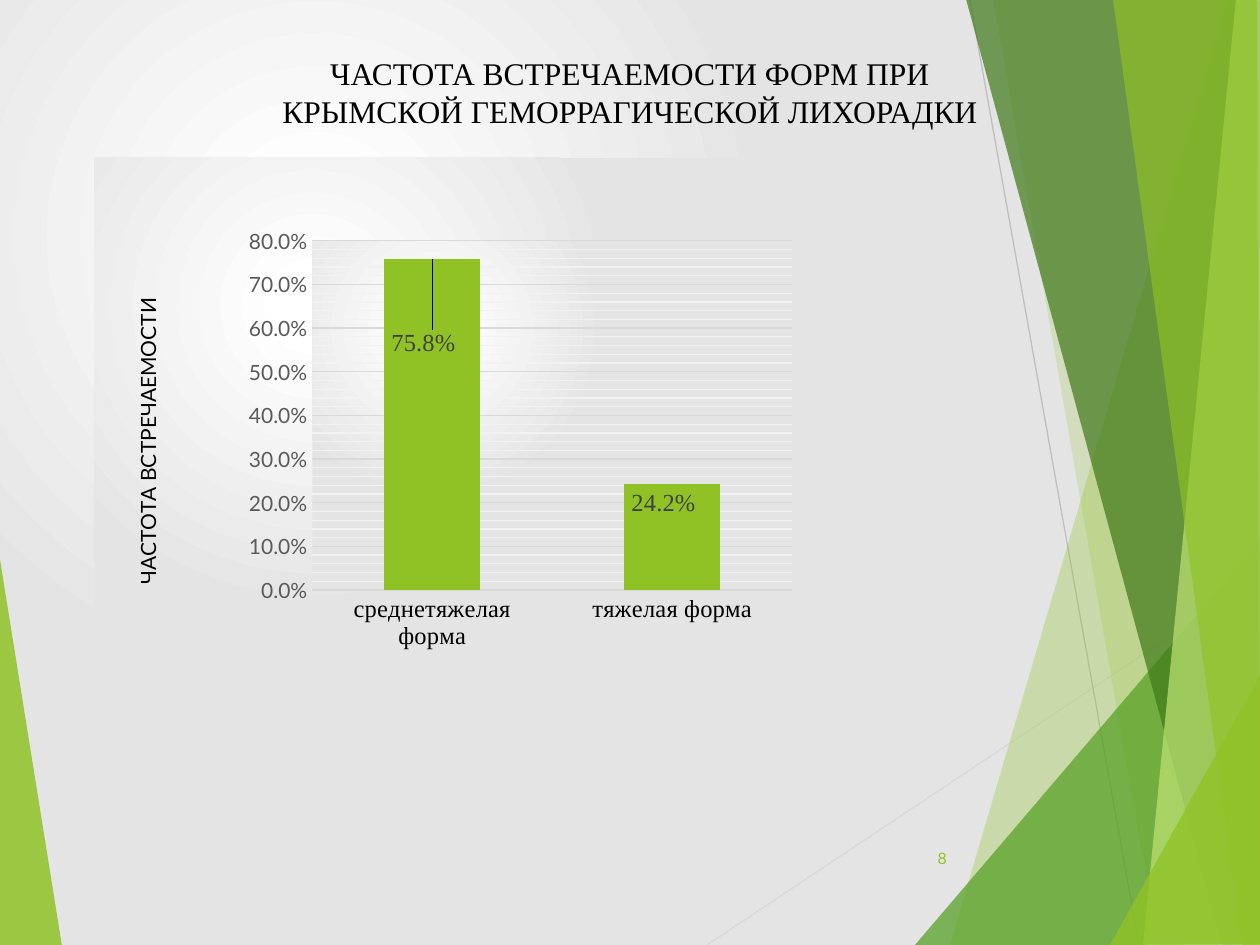
from lxml import etree
from pptx import Presentation
from pptx.chart.data import CategoryChartData
from pptx.dml.color import RGBColor
from pptx.enum.chart import XL_CHART_TYPE, XL_LABEL_POSITION, XL_TICK_MARK
from pptx.enum.shapes import MSO_CONNECTOR
from pptx.enum.text import MSO_ANCHOR, PP_ALIGN
from pptx.oxml import parse_xml
from pptx.oxml.ns import nsdecls, qn
from pptx.util import Pt

COLUMN = XL_CHART_TYPE.COLUMN_CLUSTERED
IN_END = XL_LABEL_POSITION.INSIDE_END
NO_TICK = XL_TICK_MARK.NONE
STRAIGHT = MSO_CONNECTOR.STRAIGHT
TOP, MIDDLE = MSO_ANCHOR.TOP, MSO_ANCHOR.MIDDLE
CENTER, RIGHT = PP_ALIGN.CENTER, PP_ALIGN.RIGHT

BLACK = RGBColor(0x00, 0x00, 0x00)
DARK = RGBColor(0x40, 0x40, 0x40)
GREY = RGBColor(0x59, 0x59, 0x59)
SILVER = RGBColor(0xBF, 0xBF, 0xBF)
PALE = RGBColor(0xD9, 0xD9, 0xD9)
FAINT = RGBColor(0xF2, 0xF2, 0xF2)
LIME = RGBColor(0x90, 0xC2, 0x26)
GREEN = RGBColor(0x54, 0xA0, 0x21)
FOREST = RGBColor(0x3F, 0x78, 0x19)
LIGHT = RGBColor(0xC0, 0xE4, 0x74)
SERIF, SANS = "Times New Roman", "Lato"
PX = 914400 / 126

GRAD = (
    f'<a:gradFill {nsdecls("a")} rotWithShape="1"><a:gsLst>'
    '<a:gs pos="5000"><a:srgbClr val="FFFFFF"/></a:gs>'
    '<a:gs pos="59000"><a:srgbClr val="E4E4E4"/></a:gs></a:gsLst>'
    '<a:path path="circle"><a:fillToRect l="50000" t="50000" r="100000" b="100000"/>'
    '</a:path></a:gradFill>'
)

prs = Presentation()
prs.slide_width, prs.slide_height = round(1260 * PX), round(945 * PX)
slide = prs.slides.add_slide(prs.slide_layouts[6])
shapes = slide.shapes

slide.background.fill.solid()
back = slide.element.find(".//" + qn("p:bgPr"))
back.replace(back[0], parse_xml(GRAD))


def add_text(text, box, font=SANS, size=12, color=BLACK, align=CENTER, anchor=TOP):
    frame = shapes.add_textbox(*[round(v * PX) for v in box]).text_frame
    frame.word_wrap = True
    frame.vertical_anchor = anchor
    para = frame.paragraphs[0]
    para.text = text
    para.alignment = align
    for run in para.runs:
        run.font.name, run.font.size = font, Pt(size)
        run.font.color.rgb = color


def set_layout(node, spot, **sides):
    layout = etree.Element(qn("c:layout"))
    manual = etree.SubElement(layout, qn("c:manualLayout"))
    for name, value in sides.items():
        etree.SubElement(manual, qn("c:" + name)).set("val", str(value))
    for old in node.findall(qn("c:layout")):
        node.remove(old)
    node.insert(spot, layout)


LINES = [(707, 945, 1261, 576, PALE), (970, 0, 1139, 945, SILVER)]
FACETS = [
    (LIME, 85, [(-1, 553), (62, 946), (-1, 945)]),
    (LIME, 30, [(1228, 0), (950, 945), (1262, 946), (1261, 1)]),
    (LIME, 20, [(993, -1), (1158, 945), (1261, 945), (1261, -1)]),
    (GREEN, 72, [(915, 945), (1260, 541), (1261, 945)]),
    (FOREST, 70, [(966, -1), (1222, 945), (1261, 944), (1261, -1)]),
    (LIGHT, 70, [(1236, -1), (1143, 945), (1261, 945), (1260, -1)]),
    (LIME, 65, [(1113, -1), (1242, 945), (1260, 945), (1257, -1)]),
    (LIME, 80, [(1110, 945), (1261, 674), (1261, 944)]),
]

for *ends, color in LINES:
    line = shapes.add_connector(STRAIGHT, *[round(v * PX) for v in ends])
    line.line.color.rgb, line.line.width = color, Pt(0.75)
    etree.SubElement(line.element.spPr, qn("a:effectLst"))

for color, alpha, points in FACETS:
    pen = shapes.build_freeform(*points[0], scale=PX)
    pen.add_line_segments(points[1:], close=True)
    facet = pen.convert_to_shape()
    facet.shadow.inherit = False
    facet.line.fill.background()
    facet.fill.solid()
    facet.fill.fore_color.rgb = color
    tint = facet.element.spPr.find(".//" + qn("a:srgbClr"))
    etree.SubElement(tint, qn("a:alpha")).set("val", str(alpha * 1000))

add_text("ЧАСТОТА ВСТРЕЧАЕМОСТИ ФОРМ ПРИ\nКРЫМСКОЙ ГЕМОРРАГИЧЕСКОЙ ЛИХОРАДКИ",
         (63, 48, 1134, 126), font=SERIF, size=18)

data = CategoryChartData(number_format="0.0%")
data.categories = ["среднетяжелая форма", "тяжелая форма"]
data.add_series("Series 1", [0.758, 0.242])
frame = shapes.add_chart(COLUMN, *[round(v * PX) for v in (94, 158, 873, 592)], data)
chart = frame.chart
chart.has_legend = chart.has_title = False
chart.font.name, chart.font.size = SANS, Pt(10)
chart.font.color.rgb = BLACK

cat, val = chart.category_axis, chart.value_axis
for axis, font, size, color in ((cat, SERIF, 14, BLACK), (val, SANS, 12, GREY)):
    axis.major_tick_mark = axis.minor_tick_mark = NO_TICK
    axis.format.line.fill.background()
    label = axis.tick_labels.font
    label.name, label.size, label.color.rgb = font, Pt(size), color

val.minimum_scale, val.maximum_scale = 0, 0.8
val.major_unit, val.minor_unit = 0.1, 0.02
val.tick_labels.number_format = "0.0%"
val.tick_labels.number_format_is_linked = False
val.has_major_gridlines = val.has_minor_gridlines = True
rule = val.major_gridlines.format.line
rule.color.rgb, rule.width = PALE, Pt(0.75)
minor = val._element.find(qn("c:minorGridlines"))
minor.append(parse_xml(
    f'<c:spPr {nsdecls("c", "a")}><a:ln w="{Pt(0.75)}"><a:solidFill>'
    f'<a:srgbClr val="{FAINT}"/></a:solidFill></a:ln></c:spPr>'))

title = val.axis_title
title.text_frame.text = "ЧАСТОТА ВСТРЕЧАЕМОСТИ"
font = title.text_frame.paragraphs[0].runs[0].font
font.name, font.size, font.bold, font.color.rgb = SANS, Pt(12), False, BLACK
body = title._element.find(".//" + qn("a:bodyPr"))
body.set("rot", "-5400000")
body.set("vert", "horz")
set_layout(title._element, 1, xMode="edge", yMode="edge", x=0.04, y=0.23)

plot = chart.plots[0]
plot.gap_width = 150
plot.vary_by_categories = False
bars = plot.series[0]
bars.format.fill.solid()
bars.format.fill.fore_color.rgb = LIME
for i, drop in enumerate((0.11, 0)):
    label = bars.points[i].data_label
    label.font.name, label.font.size = SERIF, Pt(14)
    label.font.color.rgb = DARK
    label.position = IN_END
    node = bars._element.findall(".//" + qn("c:dLbl"))[i]
    set_layout(node, 1, x=-0.01, y=drop)

space = chart._chartSpace
area = space.find(".//" + qn("c:plotArea"))
set_layout(area, 0, layoutTarget="inner", xMode="edge", yMode="edge",
           x=0.25, y=0.14, w=0.55, h=0.59)
fill = f'<c:spPr {nsdecls("c", "a")}>{GRAD}<a:ln><a:noFill/></a:ln></c:spPr>'
area.append(parse_xml(fill))
space.find(qn("c:chart")).addnext(parse_xml(fill))

add_text("8", (888, 833, 71, 50), size=9, color=LIME, align=RIGHT, anchor=MIDDLE)

prs.save("out.pptx")
